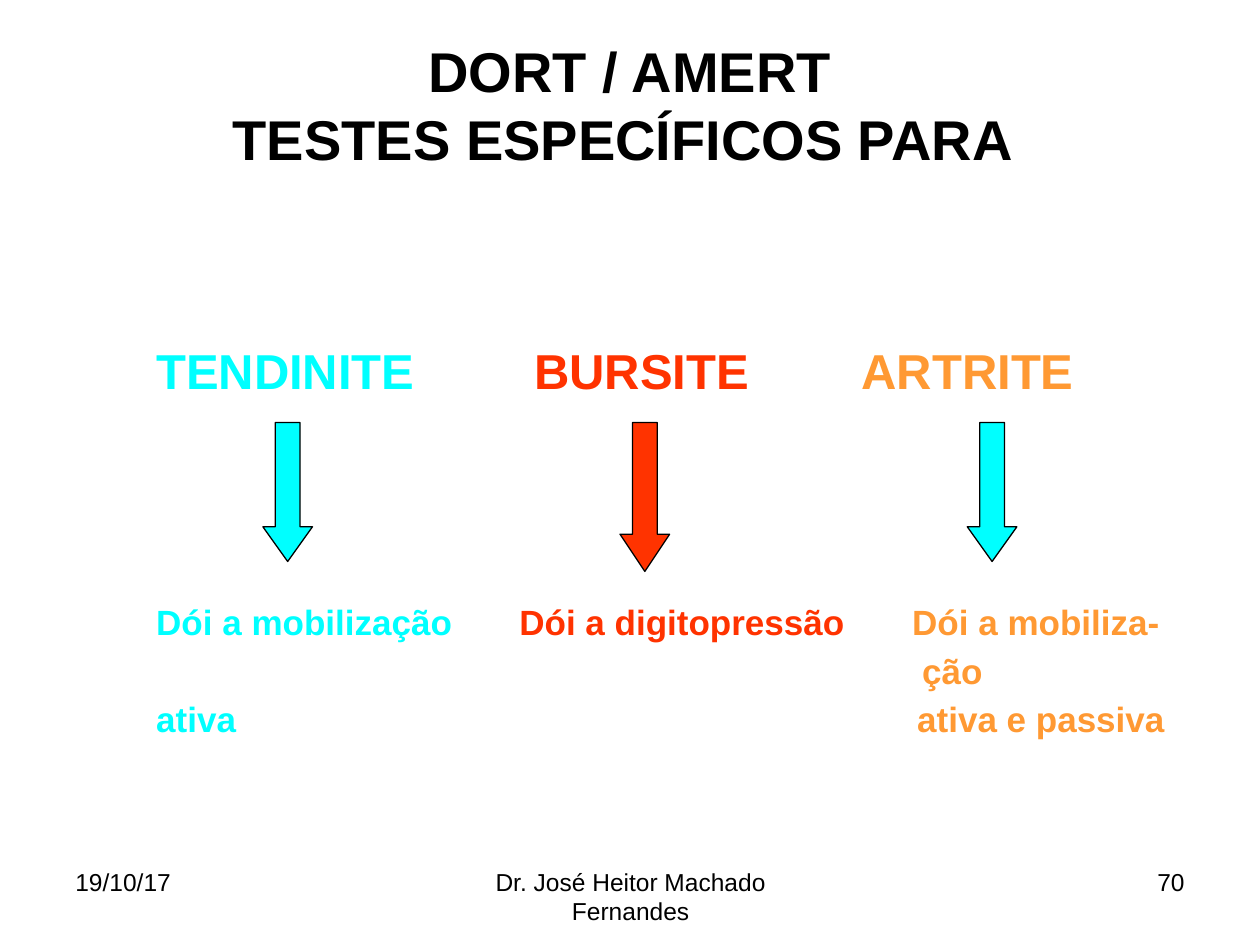
"""Builds the slide on specific tests for tendinitis, bursitis and arthritis."""
from dataclasses import dataclass

import pptx
import pptx.dml.color
import pptx.enum.shapes
import pptx.enum.text
import pptx.oxml
import pptx.oxml.ns
import pptx.util
from pptx.util import Cm, Pt

RGBColor = pptx.dml.color.RGBColor
ALIGN = pptx.enum.text.PP_ALIGN
ANCHOR = pptx.enum.text.MSO_ANCHOR

BLACK = RGBColor(0x00, 0x00, 0x00)
CYAN = RGBColor(0x00, 0xFF, 0xFF)
RED = RGBColor(0xFF, 0x33, 0x00)
ORANGE = RGBColor(0xFF, 0x99, 0x33)


@dataclass
class Footer:
    text: str
    left: float
    width: float
    align: ALIGN


@dataclass
class Arrow:
    left: float
    height: float
    head: float
    color: RGBColor


@dataclass
class Row:
    cells: list[tuple[str, RGBColor]]
    tabs: list[float]
    size: int
    before: float


FOOTERS = [
    Footer("19/10/17", 1.27, 5.92, ALIGN.LEFT),
    Footer("Dr. José Heitor Machado Fernandes", 8.69, 8.05, ALIGN.CENTER),
    Footer("70", 18.21, 5.92, ALIGN.RIGHT),
]
ARROWS = [
    Arrow(5.3, 2.8, 0.7, CYAN),
    Arrow(12.5, 3.0, 0.75, RED),
    Arrow(19.5, 2.8, 0.7, CYAN),
]
ROWS = [
    Row([("TENDINITE", CYAN), ("\tBURSITE", RED), ("\tARTRITE", ORANGE)],
        [7.62, 14.22], 28, 0),
    Row([("Dói a mobilização", CYAN), ("\tDói a digitopressão", RED),
         ("\tDói a mobiliza-", ORANGE)], [7.32, 15.24], 20, 117.4),
    Row([("\tção", ORANGE)], [15.44], 20, 6.2),
    Row([("ativa", CYAN), ("\tativa e passiva", ORANGE)], [15.34], 20, 6.2),
]


def set_all(obj: object, values: dict) -> None:
    for name, value in values.items():
        setattr(obj, name, value)


def set_font(font, size: int, color: RGBColor, bold: bool) -> None:
    set_all(font, {"name": "Arial", "size": Pt(size), "bold": bold})
    font.color.rgb = color


def add_title(s) -> None:
    sp = s.shapes.title
    set_all(sp, {"left": Cm(1.27), "top": Cm(1.4), "width": Cm(22.86), "height": Cm(2.54)})
    tf = sp.text_frame
    set_all(tf, {"word_wrap": True, "vertical_anchor": ANCHOR.MIDDLE,
                 "auto_size": pptx.enum.text.MSO_AUTO_SIZE.NONE,
                 "margin_top": Cm(0.13), "margin_bottom": Cm(1.27)})
    p = tf.paragraphs[0]
    p.text = "DORT / AMERT\vTESTES ESPECÍFICOS PARA "
    p.alignment = ALIGN.CENTER
    for r in p.runs:
        set_font(r.font, 32, BLACK, True)


def add_footer(s, footer: Footer) -> None:
    sp = s.shapes.add_textbox(Cm(footer.left), Cm(17.35), Cm(footer.width), Cm(1.32))
    tf = sp.text_frame
    tf.word_wrap = True
    p = tf.paragraphs[0]
    p.alignment = footer.align
    r = p.add_run()
    r.text = footer.text
    set_font(r.font, 14, BLACK, False)


def add_tabs(p, stops: list[float]) -> None:
    qn = pptx.oxml.ns.qn
    tabs = pptx.oxml.parse_xml(f"<a:tabLst {pptx.oxml.ns.nsdecls('a')}/>")
    for stop in stops:
        tab = tabs.makeelement(qn("a:tab"), {"pos": str(Cm(stop)), "algn": "l"})
        tabs.append(tab)
    p._p.get_or_add_pPr().append(tabs)


def add_rows(s, rows: list[Row]) -> None:
    sp = s.shapes.add_textbox(Cm(2.9), Cm(6.32), Cm(21), Cm(10.8))
    tf = sp.text_frame
    set_all(tf, {"word_wrap": True, "margin_top": Cm(0.67)})
    for i, row in enumerate(rows):
        p = tf.add_paragraph() if i else tf.paragraphs[0]
        add_tabs(p, row.tabs)
        set_all(p, {"line_spacing": 0.9, "space_before": Pt(row.before)})
        for text, color in row.cells:
            r = p.add_run()
            r.text = text
            set_font(r.font, row.size, color, True)


def add_arrow(s, arrow: Arrow) -> None:
    kind = pptx.enum.shapes.MSO_SHAPE.DOWN_ARROW
    sp = s.shapes.add_shape(kind, Cm(arrow.left), Cm(8.52), Cm(1), Cm(arrow.height))
    sp.adjustments[0] = 0.5
    sp.adjustments[1] = arrow.head
    sp.shadow.inherit = False
    sp.fill.solid()
    sp.fill.fore_color.rgb = arrow.color
    sp.line.color.rgb = BLACK
    sp.line.width = Pt(0.75)


def main() -> None:
    prs = pptx.Presentation()
    set_all(prs, {"slide_width": Cm(25.4), "slide_height": Cm(19.05)})
    s = prs.slides.add_slide(prs.slide_layouts[5])
    for footer in FOOTERS:
        add_footer(s, footer)
    add_title(s)
    add_rows(s, ROWS)
    for arrow in ARROWS:
        add_arrow(s, arrow)
    prs.save("out.pptx")


if __name__ == "__main__":
    main()
